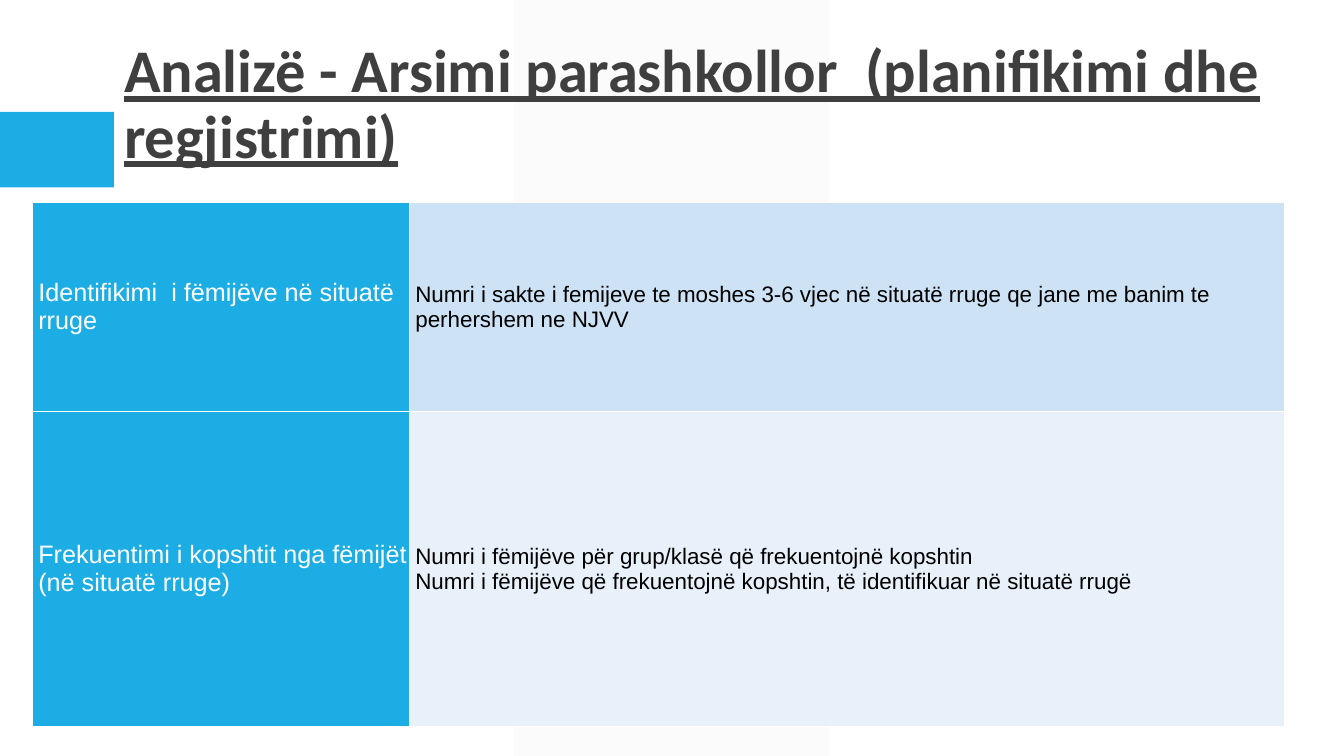
from lxml import etree
from pptx import Presentation
from pptx.dml.color import RGBColor
from pptx.enum.shapes import MSO_SHAPE
from pptx.enum.text import MSO_ANCHOR, MSO_AUTO_SIZE, PP_ALIGN
from pptx.oxml.ns import qn
from pptx.util import Inches, Pt

RECTANGLE, PARALLELOGRAM = MSO_SHAPE.RECTANGLE, MSO_SHAPE.PARALLELOGRAM
MIDDLE, BOTTOM = MSO_ANCHOR.MIDDLE, MSO_ANCHOR.BOTTOM
LEFT, NO_AUTOFIT = PP_ALIGN.LEFT, MSO_AUTO_SIZE.NONE

BLUE = RGBColor(0x1C, 0xAD, 0xE4)
PALE_BLUE = RGBColor(0xCD, 0xE3, 0xF5)
PALEST_BLUE = RGBColor(0xE8, 0xF1, 0xFA)
PALE_GREY = RGBColor(0xF2, 0xF2, 0xF2)
DARK_GREY = RGBColor(0x3F, 0x3F, 0x3F)
WHITE = RGBColor(0xFF, 0xFF, 0xFF)
BLACK = RGBColor(0, 0, 0)

# Content: topic, indicators
TITLE = "Analizë - Arsimi parashkollor  (planifikimi dhe regjistrimi)"
ROWS = [
    ("Identifikimi  i fëmijëve në situatë rruge",
     ["Numri i sakte i femijeve te moshes 3-6 vjec në situatë rruge qe jane "
      "me banim te perhershem ne NJVV"]),
    ("Frekuentimi i kopshtit nga fëmijët (në situatë rruge)",
     ["Numri i fëmijëve për grup/klasë që frekuentojnë kopshtin",
      "Numri i fëmijëve që frekuentojnë kopshtin, të identifikuar në situatë rrugë"]),
]

# Layout and formats
WIDTH, HEIGHT = 13.33, 7.5
TABLE_LEFT, TABLE_TOP = 0.32, 2.01
COLUMN_WIDTHS, ROW_HEIGHTS = (3.74, 8.68), (2.07, 3.13)
INDICATOR_FILLS = (PALE_BLUE, PALEST_BLUE)
BAND_OPACITY = 29
DECORATIONS = [
    (PARALLELOGRAM, (5.1, 0, 3.12, HEIGHT), PALE_GREY),
    (RECTANGLE, (0, 1.11, 1.13, 0.75), BLUE),
]
TITLE_FONT = {"name": "Calibri", "size": Pt(43.2), "bold": True, "underline": True}
TOPIC_FONT = {"name": "Arial", "size": Pt(18), "bold": False}
INDICATOR_FONT = {"name": "Arial", "size": Pt(16), "bold": False}
CELL_FORMAT = {"margin_left": Inches(0.06), "margin_right": 0, "margin_top": 0,
               "margin_bottom": 0, "vertical_anchor": MIDDLE}
BORDER_TAGS = ("a:lnL", "a:lnR", "a:lnT", "a:lnB")


def apply(target, values):
    for name, value in values.items():
        setattr(target, name, value)


def write(paragraph, text, font, color):
    paragraph.alignment = LEFT
    run = paragraph.add_run()
    run.text = text
    apply(run.font, font)
    run.font.color.rgb = color


def add_borders(cell):
    properties = cell._tc.get_or_add_tcPr()
    for tag in BORDER_TAGS:
        line = etree.SubElement(properties, qn(tag), w=str(Pt(1)))
        fill = etree.SubElement(line, qn("a:solidFill"))
        etree.SubElement(fill, qn("a:srgbClr"), val=str(WHITE))


def fill_cell(cell, lines, font, color, background):
    apply(cell, CELL_FORMAT)
    add_borders(cell)
    cell.fill.solid()
    cell.fill.fore_color.rgb = background
    frame = cell.text_frame
    for index, text in enumerate(lines):
        paragraph = frame.add_paragraph() if index else frame.paragraphs[0]
        write(paragraph, text, font, color)


def add_decorations(slide):
    for kind, box, color in DECORATIONS:
        shape = slide.shapes.add_shape(kind, *map(Inches, box))
        shape.shadow.inherit = False
        shape.fill.solid()
        shape.fill.fore_color.rgb = color
        shape.line.fill.background()
        if kind == PARALLELOGRAM:
            shape.adjustments[0] = 0
            tint = shape.fill._xPr.find(".//" + qn("a:srgbClr"))
            etree.SubElement(tint, qn("a:alpha"), val=str(BAND_OPACITY * 1000))


def add_title(slide):
    title = slide.shapes.title
    apply(title, {"left": Inches(1.13), "top": Inches(0.5),
                  "width": Inches(11.9), "height": Inches(1.25)})
    apply(title.text_frame, {"vertical_anchor": BOTTOM, "word_wrap": True,
                             "auto_size": NO_AUTOFIT})
    paragraph = title.text_frame.paragraphs[0]
    paragraph.line_spacing = 0.9
    write(paragraph, TITLE, TITLE_FONT, DARK_GREY)
    # Bring the title in front of the decorations
    slide.shapes._spTree.append(title._element)


def add_indicator_table(slide):
    size = sum(COLUMN_WIDTHS), sum(ROW_HEIGHTS)
    table = slide.shapes.add_table(
        len(ROWS), len(COLUMN_WIDTHS),
        *map(Inches, (TABLE_LEFT, TABLE_TOP, *size))).table
    apply(table, {"first_row": False, "horz_banding": False})
    for column, width in zip(table.columns, COLUMN_WIDTHS):
        column.width = Inches(width)
    for index, (topic, indicators) in enumerate(ROWS):
        table.rows[index].height = Inches(ROW_HEIGHTS[index])
        fill_cell(table.cell(index, 0), [topic], TOPIC_FONT, WHITE, BLUE)
        fill_cell(table.cell(index, 1), indicators, INDICATOR_FONT, BLACK,
                  INDICATOR_FILLS[index])


def main():
    presentation = Presentation()
    presentation.slide_width = Inches(WIDTH)
    presentation.slide_height = Inches(HEIGHT)
    slide = presentation.slides.add_slide(presentation.slide_layouts[5])
    add_decorations(slide)
    add_title(slide)
    add_indicator_table(slide)
    presentation.save("out.pptx")


if __name__ == "__main__":
    main()
